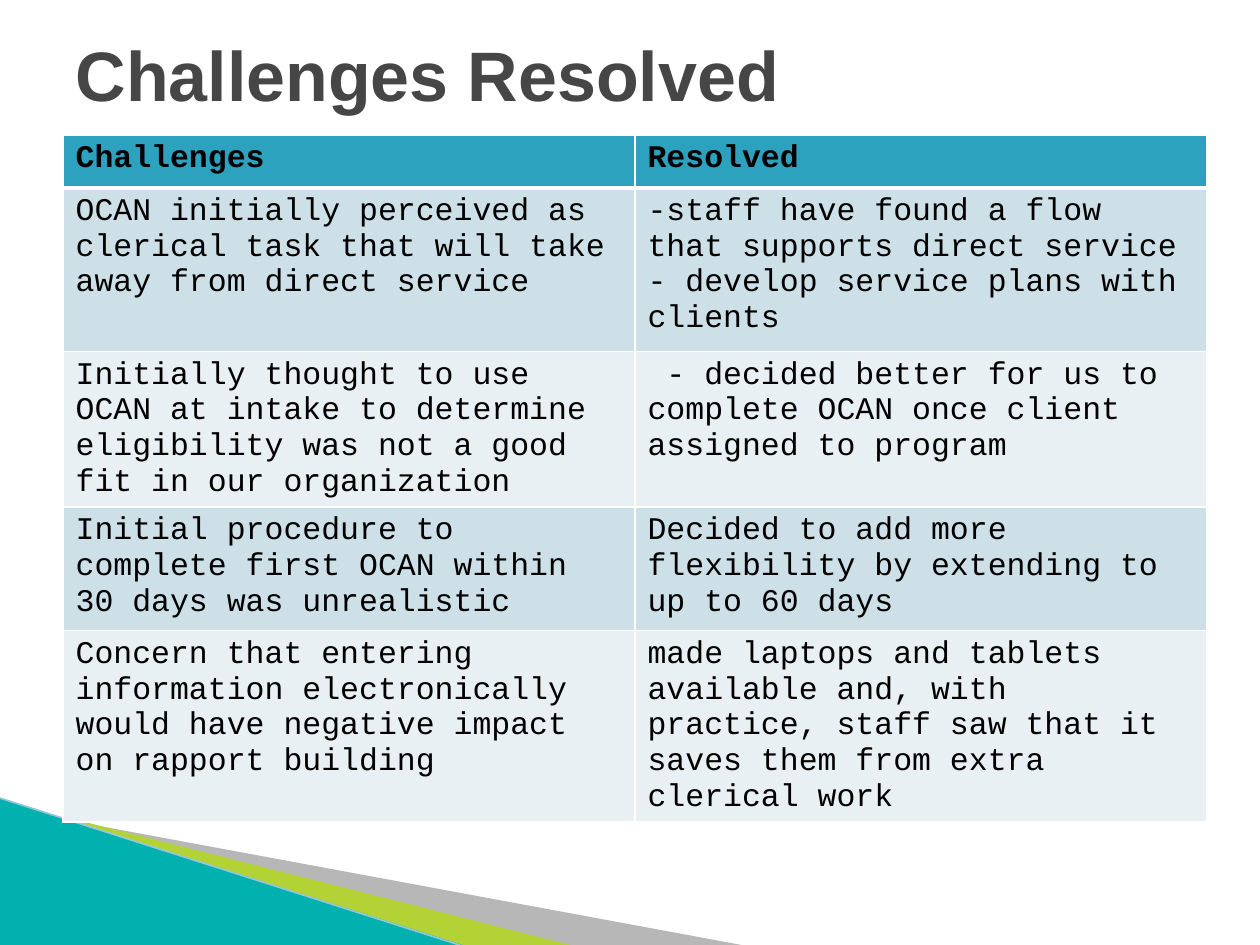
from lxml import etree
from pptx import Presentation
from pptx.dml.color import RGBColor
from pptx.enum import shapes, text
from pptx.oxml.ns import qn
from pptx.util import Cm, Pt

ROWS = [
    (1.07, ["Challenges"], ["Resolved"]),
    (3.3, ["OCAN initially perceived as clerical task that will take "
           "away from direct service"],
     ["-staff have found a flow that supports direct service",
      "- develop service plans with clients"]),
    (2.79, ["Initially thought to use OCAN at intake to determine "
            "eligibility was not a good fit in our organization"],
     [" - decided better for us to complete OCAN once client "
      "assigned to program"]),
    (2.49, ["Initial procedure to complete first OCAN within 30 days "
            "was unrealistic"],
     ["Decided to add more flexibility by extending to up to 60 days"]),
    (3.45, ["Concern that entering information electronically would "
            "have negative impact on rapport building"],
     ["made laptops and tablets available and, with practice, staff "
      "saw that it saves them from extra clerical work"]),
]


def paint(obj, color):
    obj.fill.solid()
    obj.fill.fore_color.rgb = RGBColor.from_string(color)


def add_run(para, words, size, font, color, bold=False):
    run = para.add_run()
    run.text = words
    run.font.size = Pt(size)
    run.font.name = font
    run.font.bold = bold
    run.font.color.rgb = RGBColor.from_string(color)


def plain(shape, color):
    paint(shape, color)
    shape.line.fill.background()
    shape.shadow.inherit = False


def add_wedge(slide, points, color, alpha=None):
    pts = [(Cm(x), Cm(y)) for x, y in points]
    form = slide.shapes.build_freeform(*pts[0])
    form.add_line_segments(pts[1:], close=True)
    wedge = form.convert_to_shape()
    plain(wedge, color)
    if alpha:
        tint = wedge._element.spPr.find(qn("a:solidFill"))[0]
        etree.SubElement(tint, qn("a:alpha"), val=str(alpha * 1000))


def add_swoosh(slide):
    add_wedge(slide, [(1.4, 16.54), (15.11, 19.08), (11.58, 19.08),
                      (1.4, 16.51)], "4D4D4D", 40)
    add_wedge(slide, [(1.35, 16.48), (11.61, 19.08), (9.45, 19.1),
                      (1.37, 16.51)], "B2D235")
    corner = slide.shapes.add_shape(
        shapes.MSO_SHAPE.RIGHT_TRIANGLE,
        Cm(-0.03), Cm(16.08), Cm(9.45), Cm(3))
    plain(corner, "00B1B0")
    edge = slide.shapes.add_connector(
        shapes.MSO_CONNECTOR.STRAIGHT,
        Cm(-0.03), Cm(16.08), Cm(9.42), Cm(19.1))
    edge.line.color.rgb = RGBColor.from_string("97C5D8")
    edge.line.width = Pt(0.95)
    etree.SubElement(edge._element.spPr, qn("a:effectLst"))


def set_edges(cell, base):
    props = cell._tc.get_or_add_tcPr()
    sides = [("lnL", 1), ("lnR", 1), ("lnT", 1), ("lnB", base)]
    for spot, (side, width) in enumerate(sides):
        line = etree.Element(qn("a:" + side), w=str(Pt(width)))
        fill = etree.SubElement(line, qn("a:solidFill"))
        etree.SubElement(fill, qn("a:srgbClr"), val="FFFFFF")
        props.insert(spot, line)


def fill_cell(cell, lines, row):
    head = row == 0
    paint(cell, "2DA2BF" if head else ("E8F0F4", "CDE0E8")[row % 2])
    set_edges(cell, 3 if head else 1)
    frame = cell.text_frame
    for num, words in enumerate(lines):
        para = frame.add_paragraph() if num else frame.paragraphs[0]
        add_run(para, words, 18, "Courier New", "000000", head)


def add_grid(slide):
    high = sum(row[0] for row in ROWS)
    grid = slide.shapes.add_table(
        len(ROWS), 2, Cm(1.27), Cm(2.72), Cm(23.06), Cm(high)).table
    for col in grid.columns:
        col.width = Cm(11.53)
    for row, (tall, *cells) in enumerate(ROWS):
        grid.rows[row].height = Cm(tall)
        for col, lines in enumerate(cells):
            fill_cell(grid.cell(row, col), lines, row)


def set_title(slide):
    title = slide.shapes.title
    title.left, title.top = Cm(1.27), Cm(0.43)
    title.width, title.height = Cm(22.86), Cm(2.11)
    frame = title.text_frame
    frame.vertical_anchor = text.MSO_ANCHOR.MIDDLE
    para = frame.paragraphs[0]
    para.alignment = text.PP_ALIGN.LEFT
    add_run(para, "Challenges Resolved", 40, "Arial", "464646", True)


def main():
    deck = Presentation()
    deck.slide_width, deck.slide_height = Cm(25.4), Cm(19.05)
    slide = deck.slides.add_slide(deck.slide_layouts[5])
    paint(slide.background, "FFFFFF")
    # Corner decoration, then content
    add_swoosh(slide)
    add_grid(slide)
    set_title(slide)
    deck.save("out.pptx")


if __name__ == "__main__":
    main()
